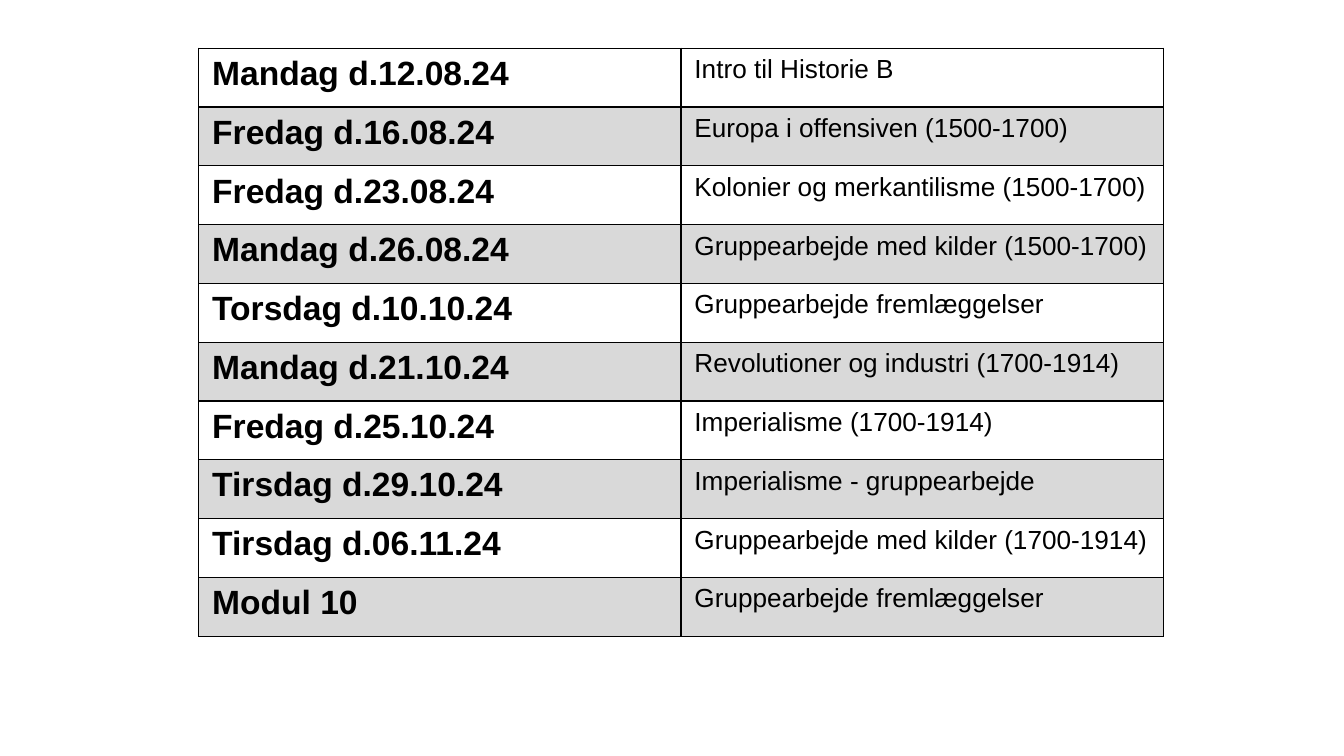
import dataclasses

import pptx
import pptx.dml.color
import pptx.oxml
import pptx.oxml.ns
import pptx.table
import pptx.util

EMU_PER_PX = 4762.5  # 1920 px across 10 inches
SLIDE_W, SLIDE_H = 1920, 1080
TABLE_LEFT, TABLE_TOP = 284, 69
COLUMN_W, ROW_H = 689, 84
FONT = "Arial"
BLACK = "000000"
BAND = "D9D9D9"
BORDER_PT = 0.75


@dataclasses.dataclass(frozen=True)
class Lesson:
    date: str
    topic: str


LESSONS = [
    Lesson("Mandag d.12.08.24", "Intro til Historie B"),
    Lesson("Fredag d.16.08.24", "Europa i offensiven (1500-1700)"),
    Lesson("Fredag d.23.08.24", "Kolonier og merkantilisme (1500-1700)"),
    Lesson("Mandag d.26.08.24", "Gruppearbejde med kilder (1500-1700)"),
    Lesson("Torsdag d.10.10.24", "Gruppearbejde fremlæggelser"),
    Lesson("Mandag d.21.10.24", "Revolutioner og industri (1700-1914)"),
    Lesson("Fredag d.25.10.24", "Imperialisme (1700-1914)"),
    Lesson("Tirsdag d.29.10.24", "Imperialisme - gruppearbejde"),
    Lesson("Tirsdag d.06.11.24", "Gruppearbejde med kilder (1700-1914)"),
    Lesson("Modul 10", "Gruppearbejde fremlæggelser"),
]


def px(n: int) -> int:
    return pptx.util.Emu(round(n * EMU_PER_PX))


def color(value: str) -> pptx.dml.color.RGBColor:
    return pptx.dml.color.RGBColor.from_string(value)


def add_borders(cell: pptx.table._Cell) -> None:
    tc_pr = cell._tc.get_or_add_tcPr()
    width = pptx.util.Pt(BORDER_PT)
    for i, side in enumerate(("lnL", "lnR", "lnT", "lnB")):
        # Border lines must come before the cell's fill.
        tc_pr.insert(i, pptx.oxml.parse_xml(
            f'<a:{side} {pptx.oxml.ns.nsdecls("a")} w="{width}">'
            f'<a:solidFill><a:srgbClr val="{BLACK}"/></a:solidFill></a:{side}>'
        ))


def fill_cell(cell: pptx.table._Cell, text: str, size: int, bold: bool, banded: bool) -> None:
    cell.text = text
    font = cell.text_frame.paragraphs[0].runs[0].font
    font.name = FONT
    font.size = pptx.util.Pt(size)
    font.bold = bold
    font.color.rgb = color(BLACK)
    if banded:
        cell.fill.solid()
        cell.fill.fore_color.rgb = color(BAND)
    else:
        cell.fill.background()
    add_borders(cell)


def main() -> None:
    prs = pptx.Presentation()
    prs.slide_width, prs.slide_height = px(SLIDE_W), px(SLIDE_H)
    s = prs.slides.add_slide(prs.slide_layouts[6])

    table = s.shapes.add_table(
        len(LESSONS), 2, px(TABLE_LEFT), px(TABLE_TOP),
        px(2 * COLUMN_W), px(len(LESSONS) * ROW_H),
    ).table
    table.first_row = table.horz_banding = False
    for column in table.columns:
        column.width = px(COLUMN_W)
    for i, lesson in enumerate(LESSONS):
        table.rows[i].height = px(ROW_H)
        banded = i % 2 == 1
        fill_cell(table.cell(i, 0), lesson.date, 18, True, banded)
        fill_cell(table.cell(i, 1), lesson.topic, 14, False, banded)

    prs.save("out.pptx")


if __name__ == "__main__":
    main()
